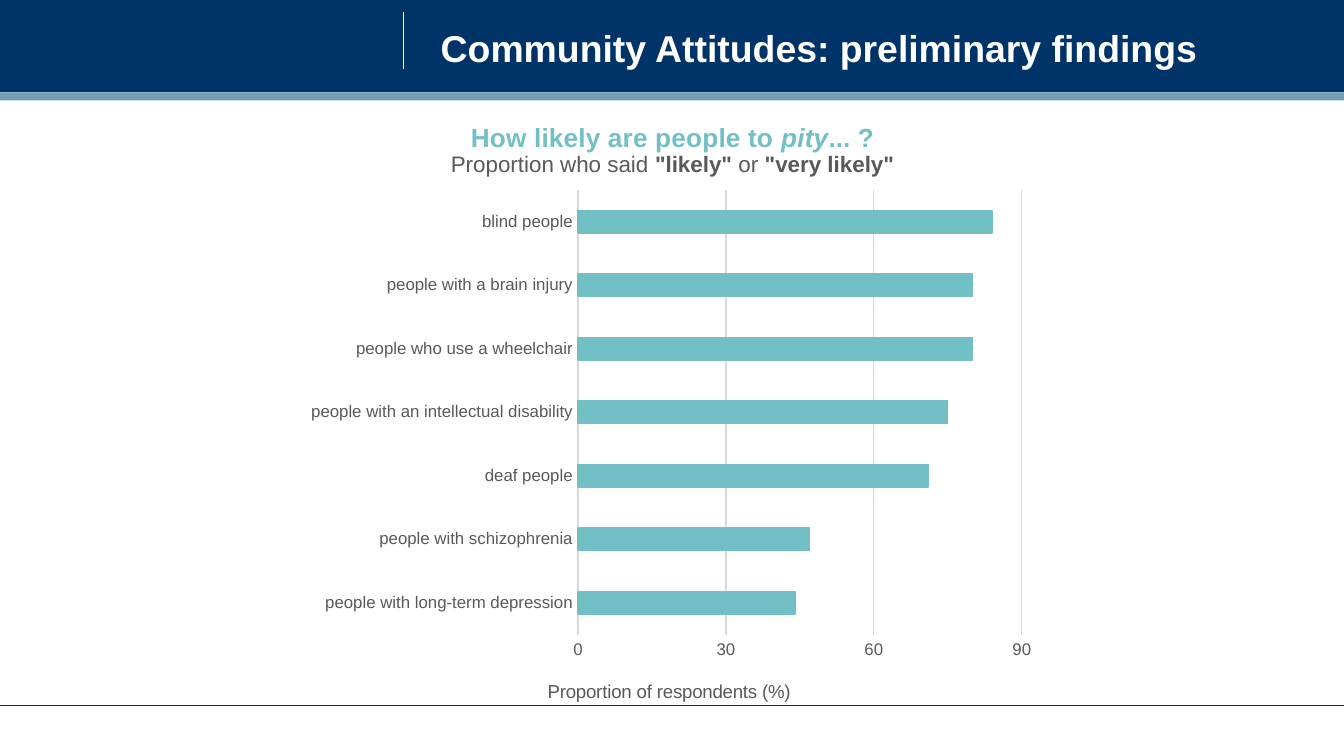
from dataclasses import dataclass
from typing import Optional

from lxml.etree import SubElement
from pptx import Presentation
from pptx.chart.chart import Chart
from pptx.chart.data import CategoryChartData
from pptx.dml.color import RGBColor
from pptx.enum.chart import XL_CHART_TYPE, XL_TICK_MARK
from pptx.enum.shapes import MSO_CONNECTOR, MSO_SHAPE
from pptx.enum.text import MSO_ANCHOR, PP_ALIGN
from pptx.oxml import parse_xml
from pptx.oxml.ns import nsdecls, qn
from pptx.slide import Slide
from pptx.util import Cm, Pt

NAVY = RGBColor(0x00, 0x33, 0x68)
STEEL = RGBColor(0x75, 0x9F, 0xB8)
TEAL = RGBColor(0x72, 0xBF, 0xC5)
GREY = RGBColor(0x59, 0x59, 0x59)
LIGHT_GREY = RGBColor(0xD9, 0xD9, 0xD9)
WHITE = RGBColor(0xFF, 0xFF, 0xFF)
FONT = "Arial"
SLIDE_WIDTH = 25.4
THIN = Pt(0.75)


@dataclass
class Band:
    top: float
    height: float
    color: RGBColor


@dataclass
class Rule:
    start: tuple[float, float]
    end: tuple[float, float]
    color: RGBColor


@dataclass
class TextRun:
    text: str
    size: float
    color: RGBColor
    bold: bool = False
    italic: bool = False


BANDS = [Band(0, 1.75, NAVY), Band(1.75, 0.15, STEEL)]
RULES = [
    Rule((7.62, 0.23), (7.62, 1.3), WHITE),
    Rule((0, 13.34), (SLIDE_WIDTH, 13.34), NAVY),
]
HEADING = [[TextRun("Community Attitudes: preliminary findings", 20, WHITE, bold=True)]]
CHART_TITLE = [
    [
        TextRun("How likely are people to ", 14, TEAL, bold=True),
        TextRun("pity", 14, TEAL, bold=True, italic=True),
        TextRun("... ?", 14, TEAL, bold=True),
    ],
    [
        TextRun("Proportion who said ", 12, GREY),
        TextRun('"likely"', 12, GREY, bold=True),
        TextRun(" or ", 12, GREY),
        TextRun('"very likely"', 12, GREY, bold=True),
    ],
]
AXIS_TITLE = [[TextRun("Proportion of respondents (%)", 10, GREY)]]
LIKELY_TO_PITY = {
    "people with long-term depression": 44,
    "people with schizophrenia": 47,
    "deaf people": 71,
    "people with an intellectual disability": 75,
    "people who use a wheelchair": 80,
    "people with a brain injury": 80,
    "blind people": 84,
}


def add_band(slide: Slide, band: Band) -> None:
    shape = slide.shapes.add_shape(
        MSO_SHAPE.RECTANGLE, Cm(0), Cm(band.top), Cm(SLIDE_WIDTH), Cm(band.height)
    )
    shape.shadow.inherit = False
    shape.fill.solid()
    shape.fill.fore_color.rgb = band.color
    shape.line.fill.background()


def add_rule(slide: Slide, rule: Rule) -> None:
    connector = slide.shapes.add_connector(
        MSO_CONNECTOR.STRAIGHT, *(Cm(value) for value in rule.start + rule.end)
    )
    connector.line.color.rgb = rule.color
    connector.line.width = THIN
    SubElement(connector._element.spPr, qn("a:effectLst"))


def write_runs(text_frame, lines: list[list[TextRun]], alignment: PP_ALIGN) -> None:
    for index, line in enumerate(lines):
        paragraph = text_frame.add_paragraph() if index else text_frame.paragraphs[0]
        paragraph.alignment = alignment
        for item in line:
            run = paragraph.add_run()
            run.text = item.text
            run.font.name = FONT
            run.font.size = Pt(item.size)
            run.font.bold = item.bold
            run.font.italic = item.italic
            run.font.color.rgb = item.color


def add_heading(slide: Slide) -> None:
    box = slide.shapes.add_textbox(Cm(8.08), Cm(0.33), Cm(17.12), Cm(1.14))
    box.text_frame.word_wrap = True
    box.text_frame.vertical_anchor = MSO_ANCHOR.MIDDLE
    write_runs(box.text_frame, HEADING, PP_ALIGN.LEFT)


def set_layout(element, x: float, y: float, size: Optional[tuple[float, float]] = None) -> None:
    """Place a title or plot area by fractions of the chart's size."""
    for old_layout in element.findall(qn("c:layout")):
        element.remove(old_layout)
    settings = {"xMode": "edge", "yMode": "edge", "x": x, "y": y}
    if size:
        settings = {"layoutTarget": "inner", **settings, "w": size[0], "h": size[1]}
    layout = parse_xml(f"<c:layout {nsdecls('c')}><c:manualLayout/></c:layout>")
    for name, value in settings.items():
        SubElement(layout[0], qn(f"c:{name}")).set("val", str(value))
    text = element.find(qn("c:tx"))
    if text is None:
        element.insert(0, layout)
    else:
        text.addnext(layout)


def clear_chart_background(chart: Chart) -> None:
    chart._chartSpace.find(qn("c:chart")).addnext(
        parse_xml(
            f"<c:spPr {nsdecls('c', 'a')}><a:noFill/><a:ln><a:noFill/></a:ln></c:spPr>"
        )
    )


def style_axes(chart: Chart) -> None:
    for axis in (chart.category_axis, chart.value_axis):
        axis.major_tick_mark = XL_TICK_MARK.NONE
        axis.minor_tick_mark = XL_TICK_MARK.NONE
        font = axis.tick_labels.font
        font.name, font.size = FONT, Pt(9)
        font.color.rgb = GREY
    values = chart.value_axis
    values.minimum_scale, values.maximum_scale, values.major_unit = 0, 90, 30
    values.format.line.fill.background()
    values.has_major_gridlines = True
    for line in (chart.category_axis.format.line, values.major_gridlines.format.line):
        line.color.rgb = LIGHT_GREY
        line.width = THIN


def add_pity_chart(slide: Slide) -> None:
    data = CategoryChartData()
    data.categories = list(LIKELY_TO_PITY)
    data.add_series("Series 1", list(LIKELY_TO_PITY.values()))
    chart = slide.shapes.add_chart(
        XL_CHART_TYPE.BAR_CLUSTERED, Cm(5.61), Cm(1.73), Cm(14.17), Cm(12.01), data
    ).chart
    chart.has_legend = False
    chart.font.name, chart.font.size = FONT, Pt(10)
    clear_chart_background(chart)
    style_axes(chart)

    plot = chart.plots[0]
    plot.gap_width = 182
    plot.vary_by_categories = False
    series_format = plot.series[0].format
    series_format.fill.solid()
    series_format.fill.fore_color.rgb = TEAL
    series_format.line.color.rgb = TEAL
    series_format.line.width = THIN

    write_runs(chart.chart_title.text_frame, CHART_TITLE, PP_ALIGN.CENTER)
    write_runs(chart.value_axis.axis_title.text_frame, AXIS_TITLE, PP_ALIGN.CENTER)
    set_layout(chart.chart_title._element, 0.2, 0.04)
    set_layout(chart.value_axis.axis_title._element, 0.33, 0.92)
    plot_area = chart._chartSpace.find(qn("c:chart")).find(qn("c:plotArea"))
    set_layout(plot_area, 0.375, 0.155, (0.592, 0.7))


def main() -> None:
    presentation = Presentation()
    presentation.slide_width = Cm(SLIDE_WIDTH)
    presentation.slide_height = Cm(14.29)
    slide = presentation.slides.add_slide(presentation.slide_layouts[6])
    for band in BANDS:
        add_band(slide, band)
    for rule in RULES:
        add_rule(slide, rule)
    add_heading(slide)
    add_pity_chart(slide)
    presentation.save("out.pptx")


if __name__ == "__main__":
    main()
